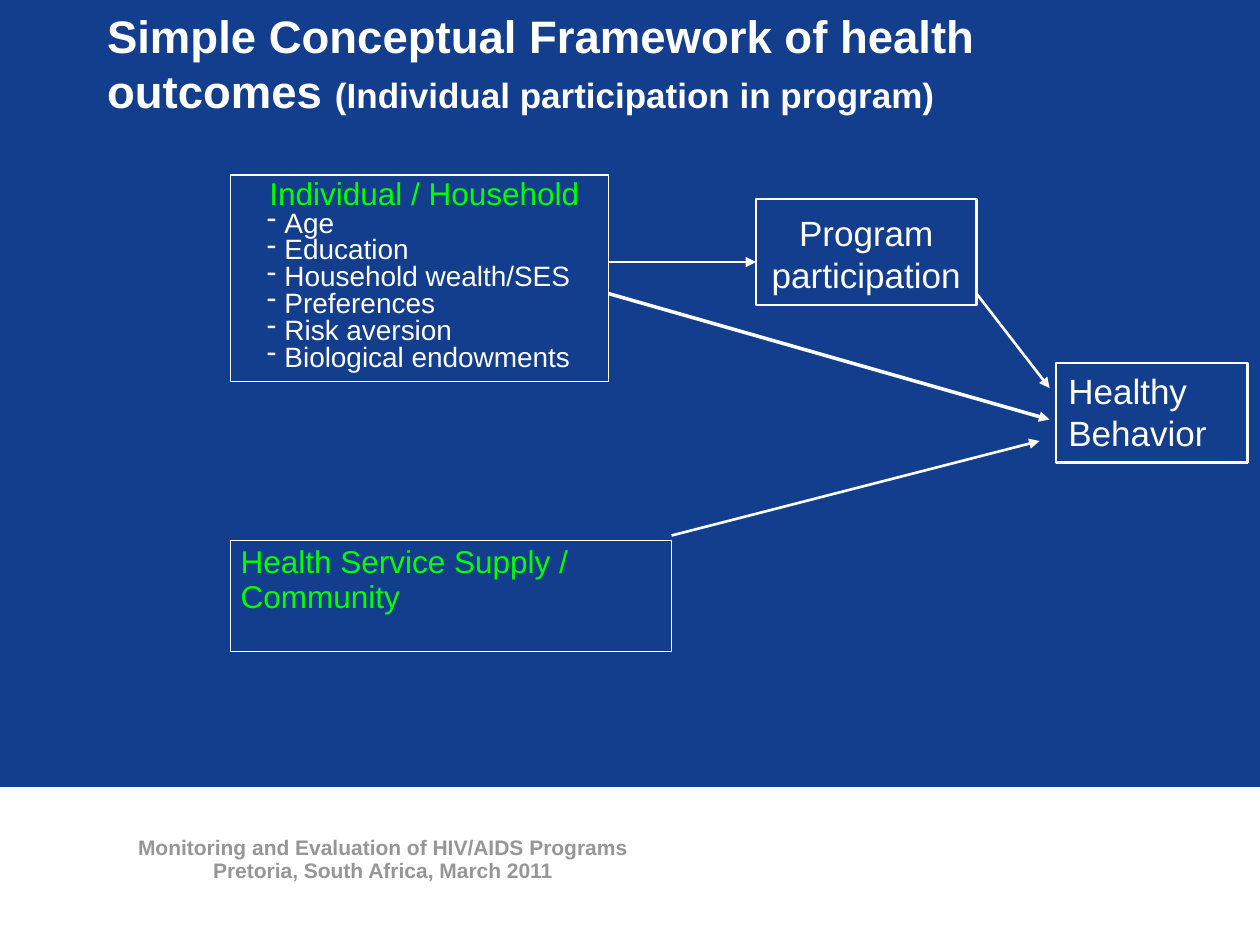
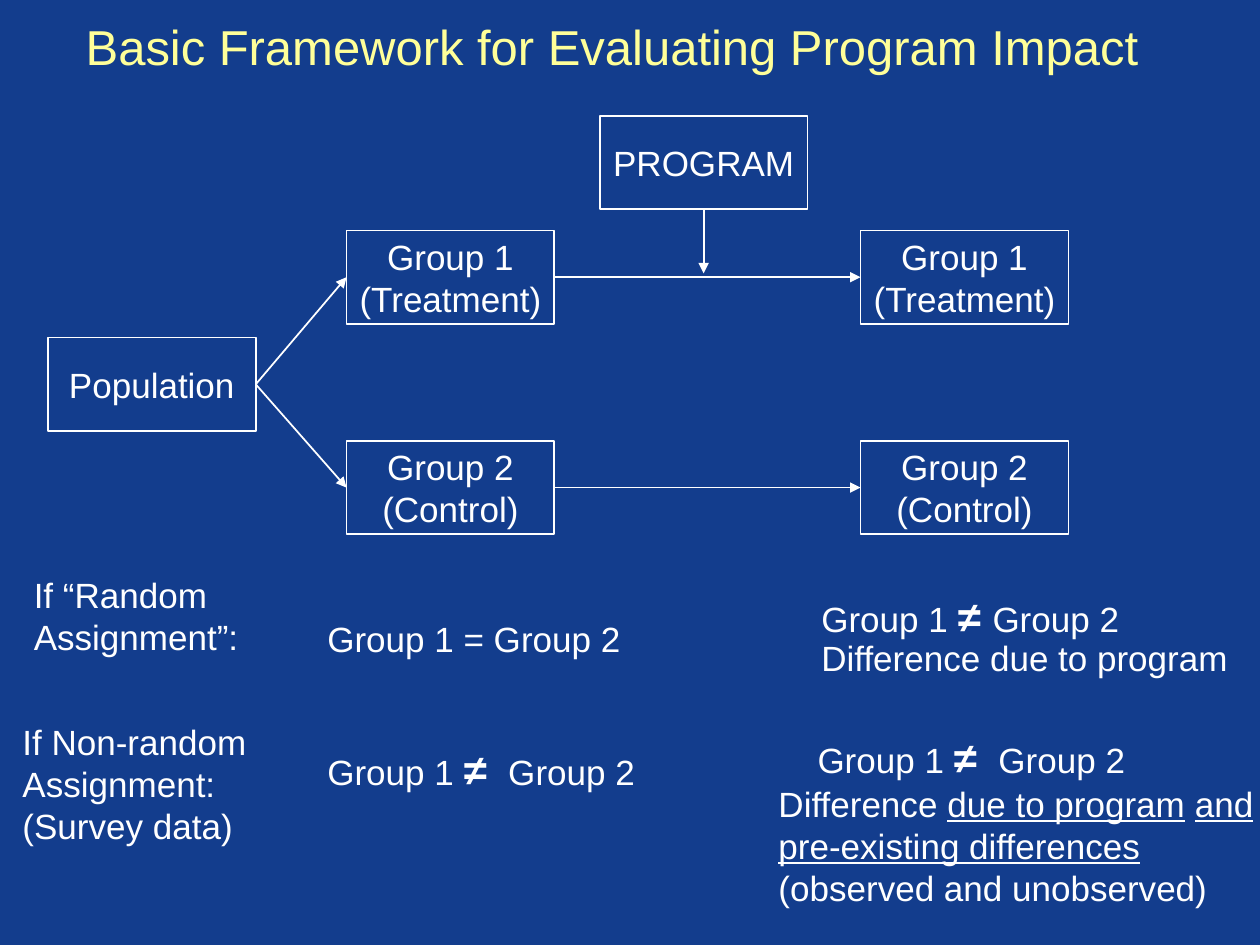
from lxml import etree
from pptx import Presentation
from pptx.dml.color import RGBColor
from pptx.enum.shapes import MSO_CONNECTOR, MSO_SHAPE
from pptx.enum.text import MSO_ANCHOR, MSO_AUTO_SIZE, PP_ALIGN
from pptx.oxml.ns import qn
from pptx.util import Inches, Pt

NAVY = RGBColor(0x13, 0x3D, 0x8D)
WHITE = RGBColor(0xFF, 0xFF, 0xFF)
GREY = RGBColor(0x96, 0x96, 0x96)
GREEN = RGBColor(0x00, 0xFF, 0x00)
YELLOW = RGBColor(0xFF, 0xFF, 0x99)
FONT = "Arial"
LEFT, CENTER = PP_ALIGN.LEFT, PP_ALIGN.CENTER
TOP, MIDDLE = MSO_ANCHOR.TOP, MSO_ANCHOR.MIDDLE
RECTANGLE, STRAIGHT = MSO_SHAPE.RECTANGLE, MSO_CONNECTOR.STRAIGHT
NO_FIT = MSO_AUTO_SIZE.NONE
TITLE_ONLY = 5

BAND = (0, 6.25, 10, 1.25)
FOOTER_AT = (0.75, 6.6, 4.58, 0.52)
FOOTER = ["Monitoring and Evaluation of HIV/AIDS Programs",
          "Pretoria, South Africa, March 2011"]

OUTCOMES_TITLE = [("Simple Conceptual Framework of health outcomes ", {"size": 26, "bold": True}),
                  ("(Individual participation in program)", {"bold": True})]
HOUSEHOLD = "Individual / Household"
HOUSEHOLD_FACTORS = ["Age", "Education", "Household wealth/SES", "Preferences",
                     "Risk aversion", "Biological endowments"]
SUPPLY = "Health Service Supply / Community"
OUTCOME_ARROWS = [
    ((4.83, 2.08), (6, 2.08), 1.5),
    ((5.33, 4.25), (8.25, 3.5), 1.5),
    ((7.75, 2.33), (8.33, 3.08), 1.5),
    ((4.83, 2.33), (8.33, 3.33), 2),
]

IMPACT_TITLE = [("Basic Framework for Evaluating Program Impact", {"size": 28, "color": YELLOW})]
BOX_W, BOX_H = 1.65, 0.74
BEFORE_X, AFTER_X = 2.75, 6.83
POPULATION = (0.38, 2.68)
PROGRAM = (4.76, 0.92)
GROUPS = [(1.83, ["Group 1", "(Treatment)"]), (3.5, ["Group 2", "(Control)"])]
NOT_EQUAL = ("≠ ", {"size": 24, "bold": True})
UNDERLINED = {"underline": True}
COMPARISONS = [
    ((0.17, 4.5, 2, 0.76), 1, [([("If “Random Assignment”:", {})], 0)]),
    ((2.5, 4.85, 2.67, 0.43), 1, [([("Group 1 = Group 2", {})], 0)]),
    ((0.08, 5.67, 2.33, 1.1), 1, [([("If Non-random Assignment: (Survey data)", {})], 0)]),
    ((2.5, 5.85, 2.67, 0.5), 1, [([("Group 1 ", {}), NOT_EQUAL, (" Group 2", {})], 0)]),
    ((6.42, 4.68, 3.58, 0.76), 0.9,
     [([("Group 1 ", {}), NOT_EQUAL, ("Group 2 Difference due to program", {})], 0)]),
    ((6.08, 5.76, 4.08, 1.5), 1, [
        ([("Group 1 ", {}), NOT_EQUAL, (" Group 2", {})], 0.31),
        ([("Difference ", {}), ("due to program", UNDERLINED), (" ", {}), ("and", UNDERLINED),
          (" ", {}), ("pre-existing differences", UNDERLINED),
          (" (observed and unobserved)", {})], 0)]),
]


def place(s, at):
    s.left, s.top, s.width, s.height = [Inches(v) for v in at]


def set_frame(s, anchor=TOP, insets=(0.1, 0.05, 0.1, 0.05), wrap=True):
    tf = s.text_frame
    tf.auto_size = NO_FIT
    tf.word_wrap = wrap
    tf.vertical_anchor = anchor
    tf.margin_left, tf.margin_top, tf.margin_right, tf.margin_bottom = [Inches(v) for v in insets]
    return tf


def add_run(p, text, size=20, color=WHITE, bold=False, underline=False):
    r = p.add_run()
    r.text = text
    font = r.font
    font.name, font.size, font.bold = FONT, Pt(size), bold
    font.underline = underline
    font.color.rgb = color


def add_paragraph(tf, runs, align=LEFT, spacing=1, indent=0, bullet=None):
    """Fill the first paragraph if it is empty, otherwise append one."""
    p = tf.paragraphs[0]
    if p.runs:
        p = tf.add_paragraph()
    p.alignment, p.line_spacing = align, spacing
    pPr = p._p.get_or_add_pPr()
    hang = 0.14 if bullet else 0
    pPr.set("marL", str(Inches(indent + hang)))
    pPr.set("indent", str(-Inches(hang)))
    if bullet:
        etree.SubElement(pPr, qn("a:buChar")).set("char", bullet)
    for text, style in runs:
        add_run(p, text, **style)


def add_title(slide, at, runs, anchor):
    s = slide.shapes.title
    place(s, at)
    add_paragraph(set_frame(s, anchor), runs)


def add_box(slide, at, line_width, **frame):
    s = slide.shapes.add_shape(RECTANGLE, *[Inches(v) for v in at])
    s.shadow.inherit = False
    s.fill.background()
    s.line.color.rgb = WHITE
    s.line.width = Pt(line_width)
    return set_frame(s, **frame)


def add_text(slide, at):
    return set_frame(slide.shapes.add_textbox(*[Inches(v) for v in at]))


def add_arrow(slide, start, end, width):
    c = slide.shapes.add_connector(STRAIGHT, *[Inches(v) for v in start + end])
    c.line.color.rgb = WHITE
    c.line.width = Pt(width)
    etree.SubElement(c.line._get_or_add_ln(), qn("a:tailEnd")).set("type", "triangle")
    etree.SubElement(c._element.spPr, qn("a:effectLst"))


def add_footer_band(slide):
    s = slide.shapes.add_shape(RECTANGLE, *[Inches(v) for v in BAND])
    s.shadow.inherit = False
    s.fill.solid()
    s.fill.fore_color.rgb = WHITE
    s.line.color.rgb = WHITE
    tf = add_text(slide, FOOTER_AT)
    for text in FOOTER:
        add_paragraph(tf, [(text, {"size": 12, "color": GREY, "bold": True})], CENTER, 0.9)


def build_outcomes(slide):
    add_footer_band(slide)
    add_title(slide, (0.75, 0, 8.5, 1), OUTCOMES_TITLE, MIDDLE)
    heading = {"size": 18, "color": GREEN}

    tf = add_box(slide, (1.83, 1.39, 3, 1.64), 0.75)
    add_paragraph(tf, [(HOUSEHOLD, heading)], spacing=0.8, indent=0.21)
    for factor in HOUSEHOLD_FACTORS:
        add_paragraph(tf, [(factor, {"size": 16})], spacing=0.8, indent=0.19, bullet="-")

    tf = add_box(slide, (1.83, 4.29, 3.5, 0.88), 0.75, insets=(0.08, 0.05, 0.03, 0.05))
    add_paragraph(tf, [(SUPPLY, heading)], spacing=0.9)

    tf = add_box(slide, (6, 1.58, 1.75, 0.84), 1.5, insets=(0.1, 0.1, 0.1, 0.05))
    add_paragraph(tf, [("Program participation", {})], CENTER)

    tf = add_box(slide, (8.38, 2.88, 1.52, 0.79), 1.5)
    for word in ("Healthy", "Behavior"):
        add_paragraph(tf, [(word, {})])

    for start, end, width in OUTCOME_ARROWS:
        add_arrow(slide, start, end, width)


def add_stage(slide, x, y, lines):
    tf = add_box(slide, (x, y, BOX_W, BOX_H), 1, anchor=MIDDLE, wrap=False)
    for text in lines:
        add_paragraph(tf, [(text, {})], CENTER)


def build_impact(slide):
    add_title(slide, (0.58, 0.08, 8.8, 0.56), IMPACT_TITLE, TOP)
    add_stage(slide, *POPULATION, ["Population"])
    add_stage(slide, *PROGRAM, ["PROGRAM"])
    fork = (POPULATION[0] + BOX_W, POPULATION[1] + BOX_H / 2)
    for y, lines in GROUPS:
        mid = y + BOX_H / 2
        for x in (BEFORE_X, AFTER_X):
            add_stage(slide, x, y, lines)
        add_arrow(slide, fork, (BEFORE_X, mid), 1)
        add_arrow(slide, (BEFORE_X + BOX_W, mid), (AFTER_X, mid), 1)
    program_mid = PROGRAM[0] + BOX_W / 2
    add_arrow(slide, (program_mid, PROGRAM[1] + BOX_H), (program_mid, 2.17), 1)

    for at, spacing, paragraphs in COMPARISONS:
        tf = add_text(slide, at)
        for runs, indent in paragraphs:
            add_paragraph(tf, runs, spacing=spacing, indent=indent)


def main():
    prs = Presentation()
    prs.slide_width, prs.slide_height = Inches(10), Inches(7.5)
    fill = prs.slide_master.background.fill
    fill.solid()
    fill.fore_color.rgb = NAVY
    for build in (build_outcomes, build_impact):
        build(prs.slides.add_slide(prs.slide_layouts[TITLE_ONLY]))
    prs.save("out.pptx")


if __name__ == "__main__":
    main()
